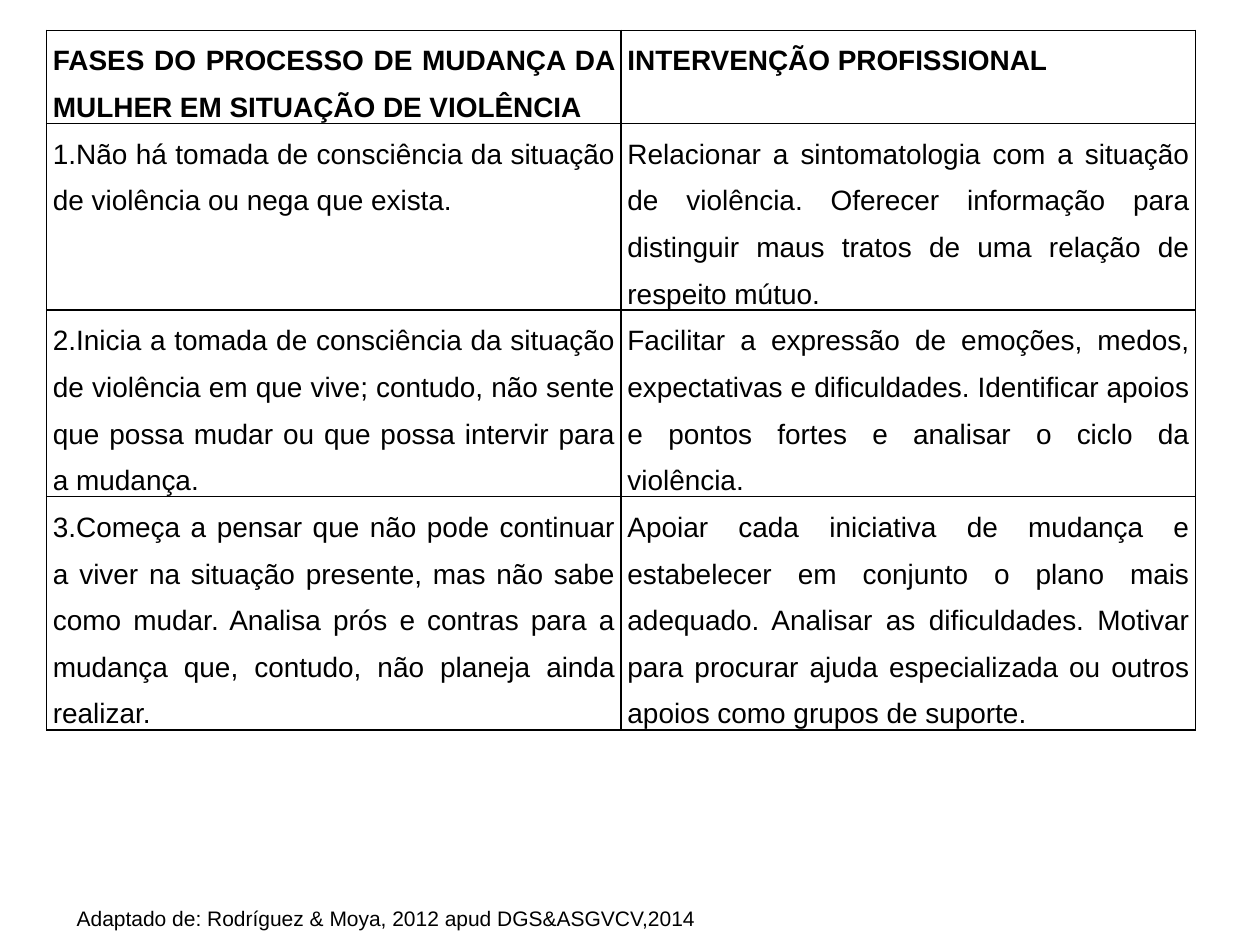
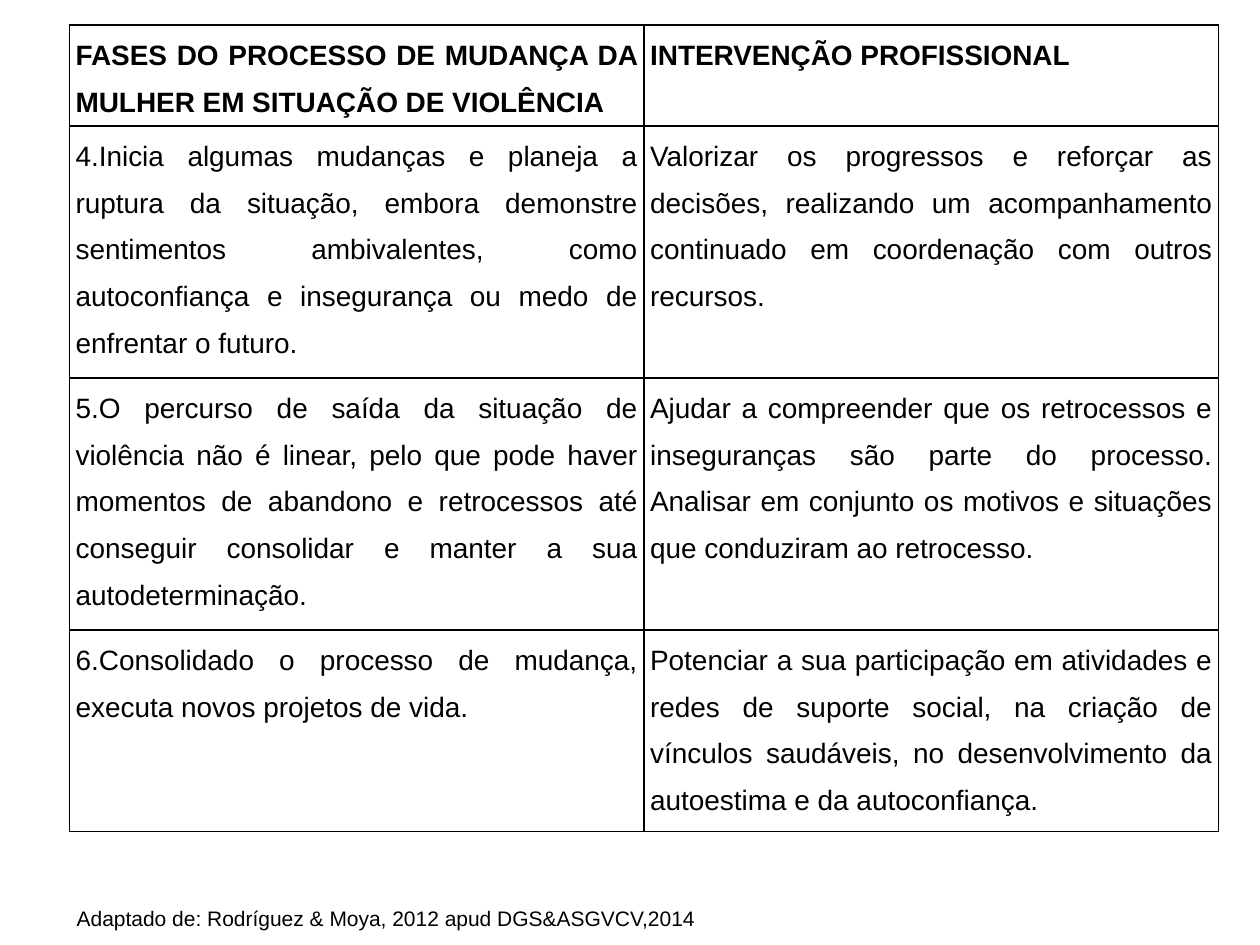
from dataclasses import dataclass

from lxml.etree import SubElement
from pptx import Presentation
from pptx.dml.color import RGBColor
from pptx.enum.text import MSO_ANCHOR, MSO_AUTO_SIZE, PP_ALIGN
from pptx.oxml.ns import qn
from pptx.util import Inches, Pt


@dataclass(frozen=True)
class Theme:
    font: str = "Arial"
    ink: str = "000000"
    table_size: int = 16
    source_size: int = 12
    line_spacing: float = 1.5
    border_width: int = 1
    column_width: float = 4.56
    cell_margin: float = 0.05


THEME = Theme()

# Shared wording
HEADER = (
    "FASES DO PROCESSO DE MUDANÇA DA MULHER EM SITUAÇÃO DE VIOLÊNCIA",
    "INTERVENÇÃO PROFISSIONAL",
)
SOURCE = "Adaptado de: Rodríguez & Moya, 2012 apud DGS&ASGVCV,2014"

# Phases and the matching professional intervention
EARLY_PHASES = [
    ("1.Não há tomada de consciência da situação de violência ou nega que exista.",
     "Relacionar a sintomatologia com a situação de violência. Oferecer informação "
     "para distinguir maus tratos de uma relação de respeito mútuo."),
    ("2.Inicia a tomada de consciência da situação de violência em que vive; contudo, "
     "não sente que possa mudar ou que possa intervir para a mudança.",
     "Facilitar a expressão de emoções, medos, expectativas e dificuldades. "
     "Identificar apoios e pontos fortes e analisar o ciclo da violência."),
    ("3.Começa a pensar que não pode continuar a viver na situação presente, mas não "
     "sabe como mudar. Analisa prós e contras para a mudança que, contudo, não planeja "
     "ainda realizar.",
     "Apoiar cada iniciativa de mudança e estabelecer em conjunto o plano mais "
     "adequado. Analisar as dificuldades. Motivar para procurar ajuda especializada ou "
     "outros apoios como grupos de suporte."),
]
LATE_PHASES = [
    ("4.Inicia algumas mudanças e planeja a ruptura da situação, embora demonstre "
     "sentimentos ambivalentes, como autoconfiança e insegurança ou medo de enfrentar "
     "o futuro.",
     "Valorizar os progressos e reforçar as decisões, realizando um acompanhamento "
     "continuado em coordenação com outros recursos."),
    ("5.O percurso de saída da situação de violência não é linear, pelo que pode haver "
     "momentos de abandono e retrocessos até conseguir consolidar e manter a sua "
     "autodeterminação.",
     "Ajudar a compreender que os retrocessos e inseguranças são parte do processo. "
     "Analisar em conjunto os motivos e situações que conduziram ao retrocesso."),
    ("6.Consolidado o processo de mudança, executa novos projetos de vida.",
     "Potenciar a sua participação em atividades e redes de suporte social, na criação "
     "de vínculos saudáveis, no desenvolvimento da autoestima e da autoconfiança."),
]


def add_span(para, text, size, bold=False):
    span = para.add_run()
    span.text = text
    span.font.name = THEME.font
    span.font.size = Pt(size)
    span.font.bold = bold
    span.font.color.rgb = RGBColor.from_string(THEME.ink)


def add_borders(cell):
    properties = cell._tc.get_or_add_tcPr()
    for side in ("a:lnL", "a:lnR", "a:lnT", "a:lnB"):
        line = SubElement(properties, qn(side), w=str(Pt(THEME.border_width)))
        fill = SubElement(line, qn("a:solidFill"))
        SubElement(fill, qn("a:srgbClr"), val=THEME.ink)


def fill_cell(cell, text, bold):
    add_borders(cell)
    cell.fill.background()
    cell.margin_left = cell.margin_right = Inches(THEME.cell_margin)
    cell.margin_top = cell.margin_bottom = 0
    para = cell.text_frame.paragraphs[0]
    para.alignment = PP_ALIGN.JUSTIFY
    para.line_spacing = THEME.line_spacing
    add_span(para, text, THEME.table_size, bold)


def add_phase_table(page, left, top, phases, line_counts, line_height):
    """Each row is as tall as its longest cell, counted in text lines."""
    rows = [HEADER, *phases]
    table = page.shapes.add_table(
        len(rows), len(HEADER), Inches(left), Inches(top),
        Inches(THEME.column_width * len(HEADER)),
        Inches(line_height * sum(line_counts)),
    ).table
    table.first_row = table.horz_banding = False
    for row_index, texts in enumerate(rows):
        table.rows[row_index].height = Inches(line_height * line_counts[row_index])
        for column_index, text in enumerate(texts):
            fill_cell(table.cell(row_index, column_index), text, bold=row_index == 0)


def add_source(page):
    box = page.shapes.add_textbox(Inches(0.51), Inches(7.14), Inches(8.45), Inches(0.3))
    frame = box.text_frame
    frame.word_wrap = True
    frame.auto_size = MSO_AUTO_SIZE.SHAPE_TO_FIT_TEXT
    frame.vertical_anchor = MSO_ANCHOR.MIDDLE
    add_span(frame.paragraphs[0], SOURCE, THEME.source_size)


def add_page(deck, **table_options):
    page = deck.slides.add_slide(deck.slide_layouts[6])
    add_phase_table(page, **table_options)
    add_source(page)


def main():
    deck = Presentation()
    deck.slide_width, deck.slide_height = Inches(10), Inches(7.5)

    # Phases 1 to 3
    add_page(deck, left=0.37, top=0.24, phases=EARLY_PHASES,
             line_counts=(2, 4, 4, 5), line_height=0.37)
    # Phases 4 to 6
    add_page(deck, left=0.55, top=0.2, phases=LATE_PHASES,
             line_counts=(2, 5, 5, 4), line_height=0.4)

    deck.save("out.pptx")


if __name__ == "__main__":
    main()
